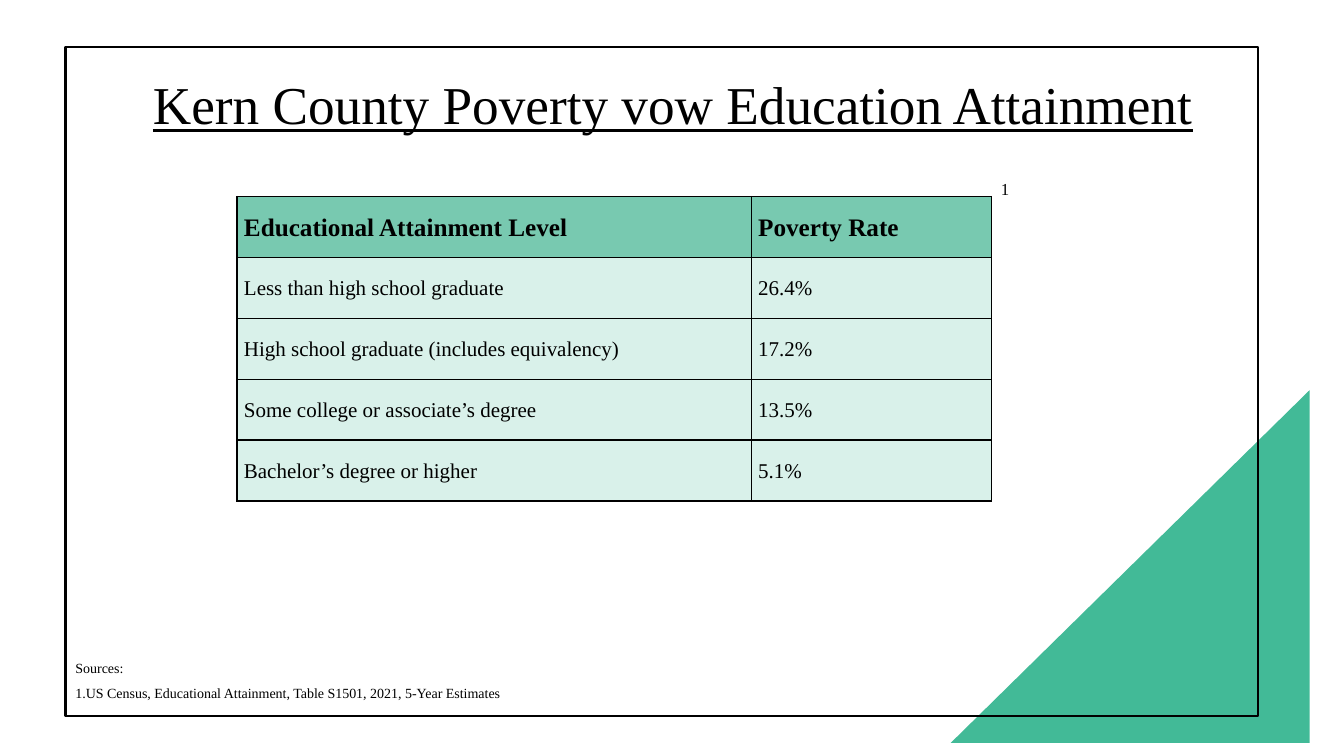
"""Build the Kern County poverty and education slide."""
from lxml import etree
from pptx import Presentation
from pptx.dml.color import RGBColor
from pptx.enum.shapes import MSO_SHAPE
from pptx.enum.text import MSO_ANCHOR, MSO_AUTO_SIZE, PP_ALIGN
from pptx.oxml.ns import qn
from pptx.util import Inches, Pt

RECTANGLE = MSO_SHAPE.RECTANGLE
TRIANGLE = MSO_SHAPE.RIGHT_TRIANGLE
MIDDLE = MSO_ANCHOR.MIDDLE
CENTER = PP_ALIGN.CENTER
NO_AUTOFIT = MSO_AUTO_SIZE.NONE

BLACK = RGBColor(0x00, 0x00, 0x00)
GREEN = RGBColor(0x42, 0xBA, 0x97)
HEADER_GREEN = RGBColor(0x78, 0xC9, 0xB0)
PALE_GREEN = RGBColor(0xD9, 0xF1, 0xEA)
FONT = "Times New Roman"

POVERTY_RATES = [
    ("Educational Attainment Level", "Poverty Rate"),
    ("Less than high school graduate", "26.4%"),
    ("High school graduate (includes equivalency)", "17.2%"),
    ("Some college or associate’s degree", "13.5%"),
    ("Bachelor’s degree or higher", "5.1%"),
]
SOURCES = [
    "Sources:",
    "1.US Census, Educational Attainment, Table S1501, 2021, 5-Year Estimates",
]


def set_attributes(target, values):
    """Set each named attribute of the target."""
    for name, value in values.items():
        setattr(target, name, value)


def write_paragraph(paragraph, text, size, layout=None, **font_values):
    """Write one run of text with its paragraph and font formats."""
    set_attributes(paragraph, layout or {})
    run = paragraph.add_run()
    run.text = text
    set_attributes(run.font, {"name": FONT, "size": Pt(size), **font_values})
    run.font.color.rgb = BLACK


def place(shape, left, top, width, height):
    """Move and size a shape in inches."""
    set_attributes(shape, {
        "left": Inches(left), "top": Inches(top),
        "width": Inches(width), "height": Inches(height),
    })


def add_title(slide, text):
    """Fill and place the title placeholder."""
    title = slide.shapes.title
    place(title, 0.12, 0.4, 13.11, 1.33)
    frame = title.text_frame
    set_attributes(frame, {
        "word_wrap": True, "auto_size": NO_AUTOFIT, "vertical_anchor": MIDDLE,
    })
    write_paragraph(frame.paragraphs[0], text, 38,
                    {"alignment": CENTER, "line_spacing": 0.9}, underline=True)


def add_text(slide, box, lines, size, layout=None):
    """Add a wrapped text box with one paragraph per line."""
    frame = slide.shapes.add_textbox(*map(Inches, box)).text_frame
    frame.word_wrap = True
    for index, line in enumerate(lines):
        paragraph = frame.add_paragraph() if index else frame.paragraphs[0]
        write_paragraph(paragraph, line, size, layout)


def add_triangle(slide):
    """Add the green corner triangle."""
    triangle = slide.shapes.add_shape(
        TRIANGLE, Inches(9.46), Inches(3.84), Inches(3.5), Inches(3.56))
    triangle.rotation = 270
    triangle.shadow.inherit = False
    triangle.fill.solid()
    triangle.fill.fore_color.rgb = GREEN
    triangle.line.fill.background()


def add_border(slide):
    """Add the unfilled black border around the content."""
    border = slide.shapes.add_shape(
        RECTANGLE, Inches(0.65), Inches(0.47), Inches(11.83), Inches(6.63))
    border.shadow.inherit = False
    border.fill.background()
    border.line.color.rgb = BLACK
    border.line.width = Pt(1.5)


def outline_cell(cell):
    """Draw a one-point black line on all four sides of a cell."""
    properties = cell._tc.get_or_add_tcPr()
    for side in ("a:lnL", "a:lnR", "a:lnT", "a:lnB"):
        line = etree.SubElement(properties, qn(side), w=str(Pt(1)))
        fill = etree.SubElement(line, qn("a:solidFill"))
        etree.SubElement(fill, qn("a:srgbClr"), val=str(BLACK))


def format_cell(cell, text, is_header):
    """Write and style one table cell."""
    set_attributes(cell, {
        "vertical_anchor": MIDDLE,
        "margin_left": Inches(0.07), "margin_right": Inches(0.07),
        "margin_top": 0, "margin_bottom": 0,
    })
    write_paragraph(cell.text_frame.paragraphs[0], text, 18 if is_header else 15,
                    {"line_spacing": 1.07, "space_after": Pt(8)}, bold=is_header)
    outline_cell(cell)
    cell.fill.solid()
    cell.fill.fore_color.rgb = HEADER_GREEN if is_header else PALE_GREEN


def add_rate_table(slide):
    """Add the table of poverty rates by education level."""
    table = slide.shapes.add_table(
        len(POVERTY_RATES), 2,
        Inches(2.35), Inches(1.95), Inches(7.48), Inches(3.02)).table
    for column, width in zip(table.columns, (5.1, 2.38)):
        column.width = Inches(width)
    for row_index, row in enumerate(POVERTY_RATES):
        for column_index, text in enumerate(row):
            format_cell(table.cell(row_index, column_index), text, row_index == 0)


def main():
    """Build and save the slide."""
    presentation = Presentation()
    presentation.slide_width = Inches(13.33)
    presentation.slide_height = Inches(7.5)
    slide = presentation.slides.add_slide(presentation.slide_layouts[5])
    add_triangle(slide)
    add_title(slide, "Kern County Poverty vow Education Attainment")
    add_rate_table(slide)
    add_text(slide, (0.65, 6.52, 6.67, 0.51), SOURCES, 10,
             {"line_spacing": Pt(10), "space_after": Pt(8)})
    add_border(slide)
    add_text(slide, (9.83, 1.72, 0.37, 0.3), ["1"], 12)
    presentation.save("out.pptx")


if __name__ == "__main__":
    main()
